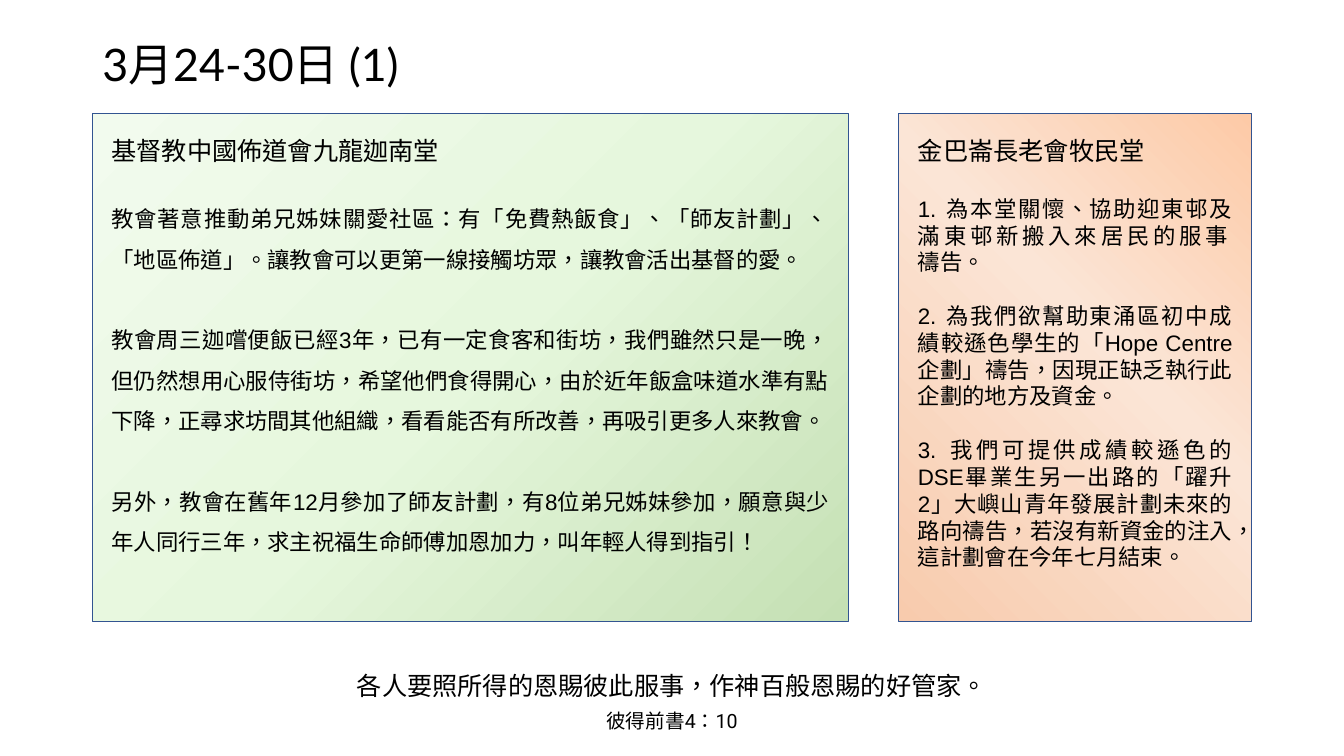
from copy import deepcopy

from pptx import Presentation
from pptx.dml.color import RGBColor
from pptx.enum.lang import MSO_LANGUAGE_ID as Language
from pptx.enum.shapes import MSO_SHAPE as Shape
from pptx.enum.text import MSO_ANCHOR as Anchor, PP_ALIGN as Align
from pptx.oxml.ns import qn
from pptx.util import Pt

BLACK = "000000"
PANEL_LINE = "325491"
PANEL_INSET = (6.5, 12)

CANAAN_REQUESTS = [
    "教會著意推動弟兄姊妹關愛社區：有「免費熱飯食」、「師友計劃」、「地區佈道」。讓教會可以更第一線接觸坊眾，讓教會活出基督的愛。",
    "教會周三迦嚐便飯已經3年，已有一定食客和街坊，我們雖然只是一晚，但仍然想用心服侍街坊，希望他們食得開心，"
    "由於近年飯盒味道水準有點下降，正尋求坊間其他組織，看看能否有所改善，再吸引更多人來教會。",
    "另外，教會在舊年12月參加了師友計劃，有8位弟兄姊妹參加，願意與少年人同行三年，求主祝福生命師傅加恩加力，叫年輕人得到指引！",
]
SHEPHERD_REQUESTS = [
    "1. 為本堂關懷、協助迎東邨及滿東邨新搬入來居民的服事\v禱告。",
    "2. 為我們欲幫助東涌區初中成績較遜色學生的「Hope Centre企劃」禱告，因現正缺乏執行此企劃的地方及資金。",
    "3. 我們可提供成績較遜色的DSE畢業生另一出路的「躍升2」大嶼山青年發展計劃未來的路向禱告，若沒有新資金的注入，這計劃會在今年七月結束。",
]


def color(hex_string):
    return RGBColor.from_string(hex_string)


def add_text(slide, box, paragraphs, font_name, anchor=Anchor.TOP):
    """Add a text box; paragraphs are (text, size, paragraph format) tuples."""
    frame = slide.shapes.add_textbox(*map(Pt, box)).text_frame
    frame.word_wrap = True
    frame.vertical_anchor = anchor
    for index, (text, size, paragraph_format) in enumerate(paragraphs):
        paragraph = frame.add_paragraph() if index else frame.paragraphs[0]
        paragraph.text = text
        for name, value in paragraph_format.items():
            setattr(paragraph, name, value)
        font_format = {"name": font_name, "size": Pt(size),
                       "language_id": Language.TRADITIONAL_CHINESE}
        for run in paragraph.runs:
            for name, value in font_format.items():
                setattr(run.font, name, value)
            run.font.color.rgb = color(BLACK)
        for line_break in paragraph._p.findall(qn("a:br")):
            line_break.append(deepcopy(paragraph.runs[0]._r.rPr))


def fill_gradient(shape, stops, angle):
    """Fill with (position, colour) stops at a counter-clockwise angle."""
    shape.fill.gradient()
    shape.fill.gradient_angle = angle
    stop_list = shape._element.spPr.find(".//" + qn("a:gsLst"))
    while len(stop_list) < len(stops):
        stop_list.append(deepcopy(stop_list[0]))
    for stop, (position, hex_string) in zip(shape.fill.gradient_stops, stops):
        stop.position = position
        stop.color.rgb = color(hex_string)


def add_church_panel(slide, box, church, requests, stops, angle,
                     line_spacing, heading_gap, request_gap):
    panel = slide.shapes.add_shape(Shape.RECTANGLE, *map(Pt, box))
    panel.shadow.inherit = False
    fill_gradient(panel, stops, angle)
    panel.line.color.rgb = color(PANEL_LINE)
    panel.line.width = Pt(1)

    paragraphs = [(church, 18, {"space_after": Pt(heading_gap)})]
    for request in requests:
        is_last = request == requests[-1]
        paragraphs.append((request, 16, {
            "alignment": Align.JUSTIFY,
            "line_spacing": line_spacing,
            "space_after": Pt(0 if is_last else request_gap),
        }))
    left, top, width, height = box
    inset_x, inset_y = PANEL_INSET
    text_box = (left + inset_x, top + inset_y,
                width - 2 * inset_x, height - 2 * inset_y)
    add_text(slide, text_box, paragraphs, "Arial")


def add_title(slide, box):
    add_text(slide, box, [("3月24-30日 (1)", 32, {"line_spacing": 0.9})],
             "Lato", Anchor.MIDDLE)


def add_verse(slide, box):
    add_text(slide, box, [
        ("各人要照所得的恩賜彼此服事，作神百般恩賜的好管家。", 18,
         {"alignment": Align.CENTER, "space_after": Pt(6)}),
        ("彼得前書4：10", 14, {"alignment": Align.CENTER}),
    ], "Roboto", Anchor.BOTTOM)


def main():
    presentation = Presentation()
    presentation.slide_width, presentation.slide_height = Pt(960), Pt(540)
    slide = presentation.slides.add_slide(presentation.slide_layouts[6])
    add_title(slide, (66, 21.6, 472, 52))
    add_church_panel(
        slide, (66, 81, 540, 363), "基督教中國佈道會九龍迦南堂", CANAAN_REQUESTS,
        [(0, "C5E0B4"), (0.5, "E6F7DD"), (1, "F2FBEE")], 135,
        line_spacing=1.5, heading_gap=19, request_gap=29)
    add_church_panel(
        slide, (642, 81, 252, 363), "金巴崙長老會牧民堂", SHEPHERD_REQUESTS,
        [(0, "F8CBAD"), (0.57, "FBE5D6"), (1, "FDCAA7")], 45,
        line_spacing=1.0, heading_gap=21, request_gap=19)
    add_verse(slide, (152, 475, 656, 52))
    presentation.save("out.pptx")


if __name__ == "__main__":
    main()
